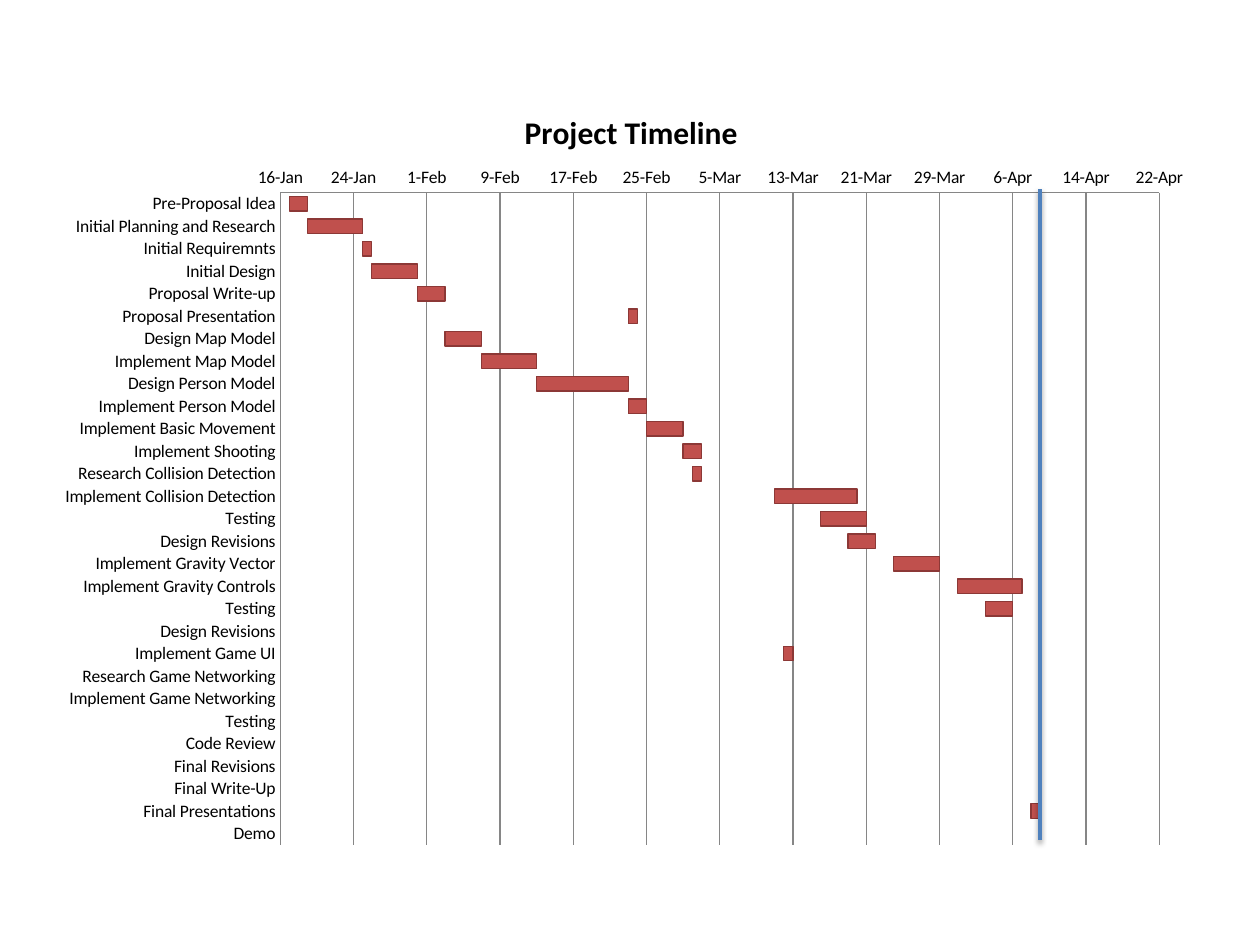
from dataclasses import dataclass

from lxml.etree import SubElement
from pptx import Presentation
from pptx.chart.data import CategoryChartData
from pptx.dml.color import RGBColor
from pptx.enum.chart import XL_CHART_TYPE, XL_TICK_MARK
from pptx.enum.shapes import MSO_CONNECTOR
from pptx.oxml import parse_xml
from pptx.oxml.ns import nsdecls, qn
from pptx.util import Cm, Pt


@dataclass(frozen=True)
class Theme:
    font: str = "Calibri"
    text: RGBColor = RGBColor(0, 0, 0)
    bar: RGBColor = RGBColor(0xC0, 0x50, 0x4D)
    bar_edge: RGBColor = RGBColor(0x8C, 0x38, 0x36)
    grid: RGBColor = RGBColor(0x86, 0x86, 0x86)
    today: RGBColor = RGBColor(0x4F, 0x81, 0xBD)
    title_size: Pt = Pt(18)
    label_size: Pt = Pt(10)


theme = Theme()

# Task, start day (spreadsheet serial), days completed, days remaining
TASKS = [
    ("Pre-Proposal Idea", 40195, 2, 2),
    ("Initial Planning and Research", 40197, 6, 6),
    ("Initial Requiremnts", 40203, 1, 1),
    ("Initial Design", 40204, 5, 5),
    ("Proposal Write-up", 40209, 3, 3),
    ("Proposal Presentation", 40232, 1, 1),
    ("Design Map Model", 40212, 4, 3),
    ("Implement Map Model", 40216, 6, 2),
    ("Design Person Model", 40222, 10, 2),
    ("Implement Person Model", 40232, 2, 2),
    ("Implement Basic Movement", 40234, 4, 2),
    ("Implement Shooting", 40238, 2, 2),
    ("Research Collision Detection", 40239, 1, 1),
    ("Implement Collision Detection", 40248, 9, 4),
    ("Testing", 40253, 5, 5),
    ("Design Revisions", 40256, 3, 2),
    ("Implement Gravity Vector", 40261, 5, 3),
    ("Implement Gravity Controls", 40268, 7, 3),
    ("Testing", 40271, 3, 5),
    ("Design Revisions", 40247, 0, 2),
    ("Implement Game UI", 40249, 1, 3),
    ("Research Game Networking", 40252, 0, 1),
    ("Implement Game Networking", 40253, 0, 7),
    ("Testing", 40260, 0, 10),
    ("Code Review", 40262, 0, 7),
    ("Final Revisions", 40263, 0, 10),
    ("Final Write-Up", 40273, 0, 3),
    ("Final Presentations", 40276, 1, 1),
    ("Demo", 40288, 0, 1),
]


def write(tf, text, *, size, color, bold=False):
    r = tf.paragraphs[0].add_run()
    r.text = text
    r.font.name, r.font.size, r.font.bold = theme.font, size, bold
    r.font.color.rgb = color


def place(parent, index, **values):
    """Set a manual chart layout as fractions of the chart area."""
    old = parent.find(qn("c:layout"))
    if old is not None:
        parent.remove(old)
    layout = parse_xml(f"<c:layout {nsdecls('c')}><c:manualLayout/></c:layout>")
    for tag, val in values.items():
        SubElement(layout[0], qn(f"c:{tag}")).set("val", str(val))
    parent.insert(index, layout)


prs = Presentation()
prs.slide_width, prs.slide_height = Cm(25.4), Cm(19.05)
s = prs.slides.add_slide(prs.slide_layouts[6])

# Gantt chart: stacked bars on hidden start offsets
names, starts, done, left = zip(*TASKS)
data = CategoryChartData()
data.categories = names
for number, values in enumerate((starts, done, left), 1):
    data.add_series(f"Series {number}", values)
chart = s.shapes.add_chart(XL_CHART_TYPE.BAR_STACKED, Cm(0.84), Cm(1.47),
                           Cm(23.47), Cm(15.88), data).chart
chart.has_legend = False
chart.font.name, chart.font.size = theme.font, theme.label_size
chart.font.color.rgb = theme.text

# Title and plot area
title = chart.chart_title
write(title.text_frame, "Project Timeline", size=theme.title_size,
      color=theme.text, bold=True)
place(title._element, 1, xMode="edge", yMode="edge", x=0.41, y=0.04)
plot = chart.plots[0]
place(plot._element.getparent(), 0, layoutTarget="inner", xMode="edge",
      yMode="edge", x=0.205, y=0.152, w=0.755, h=0.828)

# Bars
plot.gap_width, plot.overlap, plot.vary_by_categories = 55, 100, False
for series in plot.series:
    series.format.fill.background()
    series.format.line.fill.background()
bars = plot.series[1].format
bars.fill.solid()
bars.fill.fore_color.rgb = theme.bar
bars.line.color.rgb = theme.bar_edge
bars.line.width = Pt(0.75)

# Axes
tasks, days = chart.category_axis, chart.value_axis
tasks.reverse_order = True
days.minimum_scale, days.maximum_scale, days.major_unit = 40194, 40290, 8
days.tick_labels.number_format = r"[$-409]d\-mmm;@"
days.tick_labels.number_format_is_linked = False
days.has_major_gridlines = True
for axis in (tasks, days):
    axis.major_tick_mark = axis.minor_tick_mark = XL_TICK_MARK.NONE
for line in (tasks.format.line, days.format.line, days.major_gridlines.format.line):
    line.color.rgb = theme.grid
    line.width = Pt(0.75)

# Today marker with a soft shadow
today = s.shapes.add_connector(MSO_CONNECTOR.STRAIGHT, Cm(20.96), Cm(3.81),
                               Cm(20.96), Cm(16.94))
today.line.color.rgb = theme.today
today.line.width = Pt(2)
today._element.spPr.append(parse_xml(
    f'<a:effectLst {nsdecls("a")}><a:outerShdw blurRad="{Pt(3.1)}" dist="{Pt(1.6)}" '
    'dir="5400000" rotWithShape="0"><a:srgbClr val="000000"><a:alpha val="38000"/>'
    '</a:srgbClr></a:outerShdw></a:effectLst>'))

prs.save("out.pptx")
